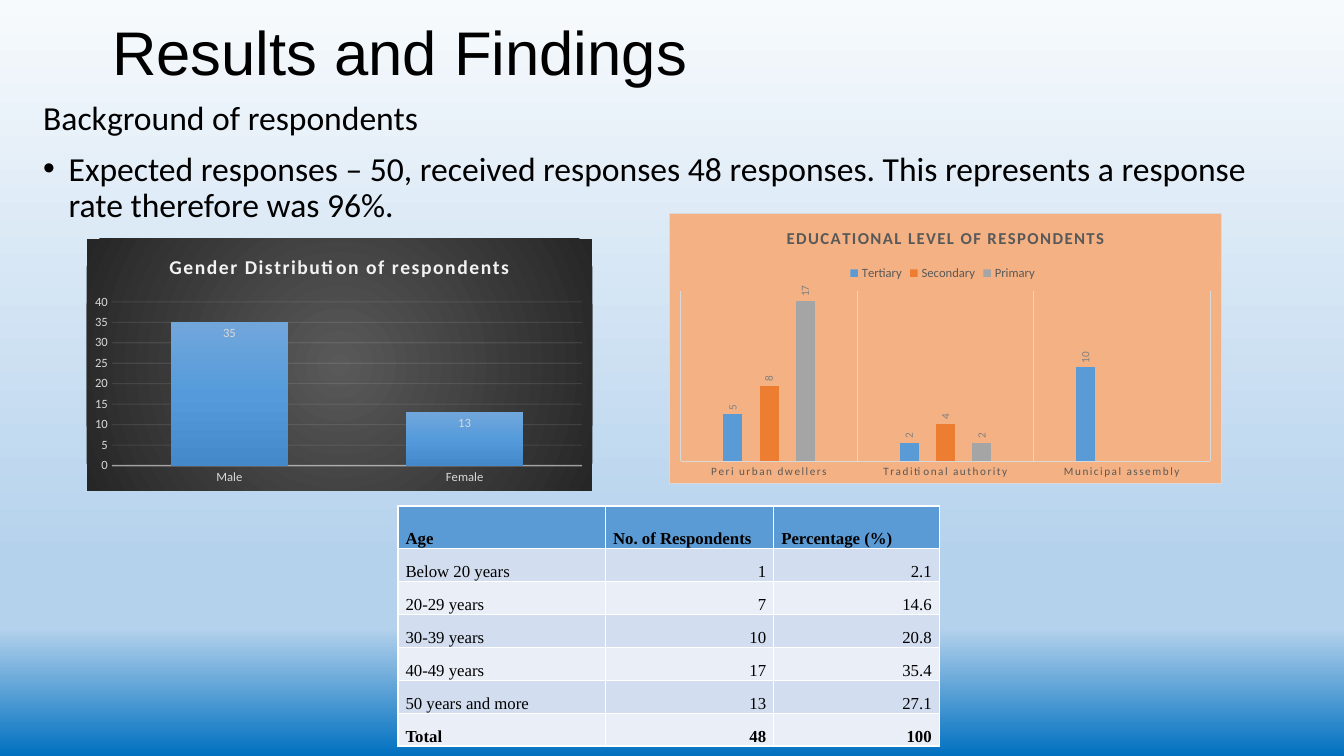
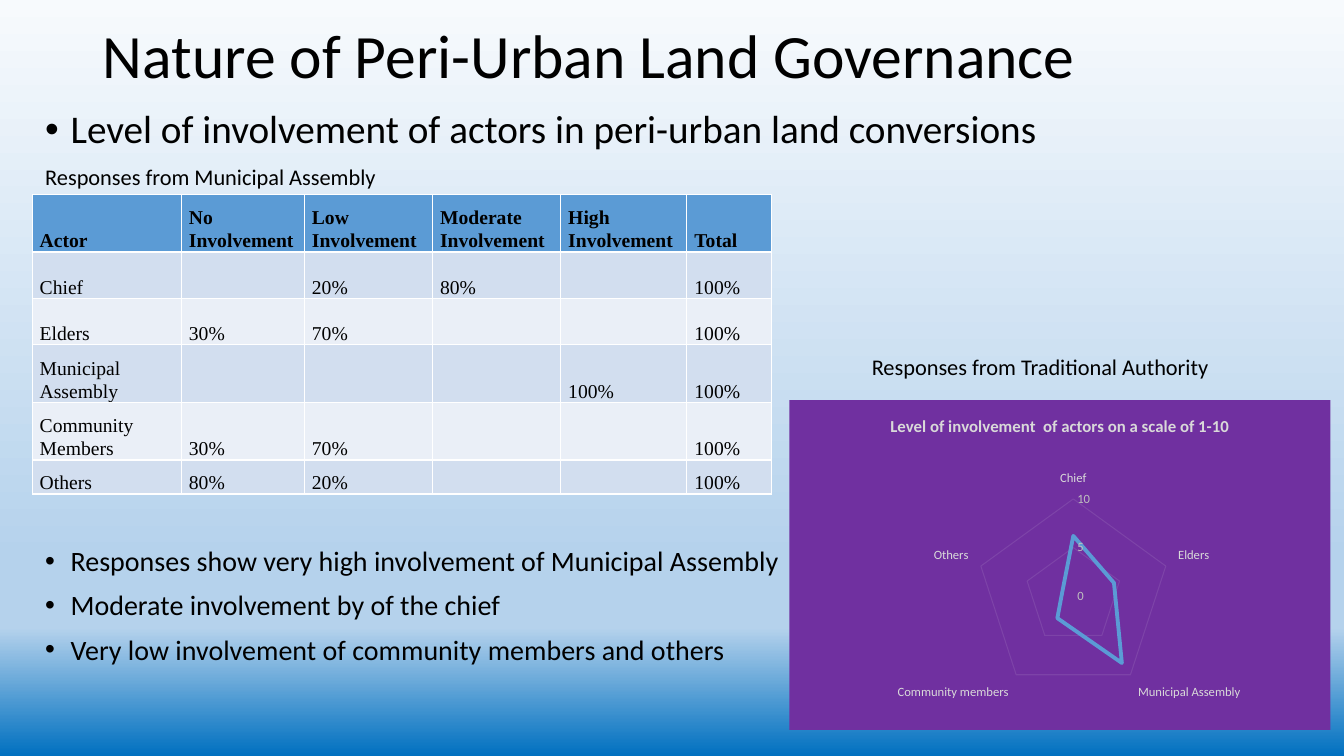
from dataclasses import dataclass

from lxml import etree
from pptx import Presentation
from pptx.chart.data import CategoryChartData
from pptx.dml.color import RGBColor
from pptx.enum.chart import XL_CHART_TYPE, XL_LABEL_POSITION, XL_LEGEND_POSITION, XL_TICK_MARK
from pptx.enum.text import MSO_ANCHOR, PP_ALIGN
from pptx.oxml import parse_xml
from pptx.oxml.ns import nsdecls, qn
from pptx.util import Cm, Pt

LEFT, RIGHT, JUSTIFY = PP_ALIGN.LEFT, PP_ALIGN.RIGHT, PP_ALIGN.JUSTIFY
COLUMNS, RADAR = XL_CHART_TYPE.COLUMN_CLUSTERED, XL_CHART_TYPE.RADAR
INSIDE_END, OUTSIDE_END = XL_LABEL_POSITION.INSIDE_END, XL_LABEL_POSITION.OUTSIDE_END
LEGEND_TOP = XL_LEGEND_POSITION.TOP
NO_TICKS = XL_TICK_MARK.NONE
MIDDLE, BOTTOM = MSO_ANCHOR.MIDDLE, MSO_ANCHOR.BOTTOM


@dataclass(frozen=True)
class Theme:
    body_font: str = "Calibri"
    table_font: str = "Times New Roman"
    ink: str = "000000"
    blue: str = "5B9BD5"
    orange: str = "ED7D31"
    grey: str = "A5A5A5"
    row_dark: str = "D2DEEF"
    row_light: str = "EAEFF7"
    charcoal: str = "262626"
    peach: str = "F4B183"
    purple: str = "7030A0"
    pale: str = "F2F2F2"
    silver: str = "D9D9D9"
    scale_grey: str = "BFBFBF"
    label_grey: str = "808080"
    dark_grey: str = "595959"
    background: tuple = ((0, "F7FAFD"), (74, "B5D2EC"), (83, "B5D2EC"), (100, "0070C0"))
    bar_shade: tuple = ((0, "71A6DB"), (50, "559BDB"), (100, "448ACA"))
    spotlight: tuple = ((0, "595959"), (100, "262626"))
    title_size: int = 44
    heading_size: int = 28
    lead_size: int = 24
    bullet_size: int = 20
    caption_size: int = 16
    chart_size: int = 10
    axis_size: int = 9
    small_size: int = 8


theme = Theme()


def write(para, text, size, name=theme.body_font, color=theme.ink, bold=False):
    para.text = text
    para.font.size, para.font.name, para.font.bold = Pt(size), name, bold
    para.font.color.rgb = RGBColor.from_string(color)


def place(element, index, **fractions):
    """Give a chart part a manual layout, in fractions of the chart area."""
    for old in element.findall(qn("c:layout")):
        element.remove(old)
    target = '<c:layoutTarget val="inner"/>' if "w" in fractions else ""
    modes = '<c:xMode val="edge"/><c:yMode val="edge"/>'
    values = "".join(f'<c:{key} val="{value}"/>' for key, value in fractions.items())
    element.insert(index, parse_xml(
        f'<c:layout {nsdecls("c")}><c:manualLayout>{target}{modes}{values}</c:manualLayout></c:layout>'))


deck = Presentation()
deck.slide_width, deck.slide_height = Cm(33.87), Cm(19.05)
master = deck.slide_master
master.background.fill.solid()

# Titles
titles = [
    ("Results and Findings", "Arial", (2.57, 0.38, 28.7, 2.06)),
    ("Nature of Peri-Urban Land Governance", theme.body_font, (2.34, 0.33, 29.21, 2.31)),
]
pages = []
for text, font_name, area in titles:
    page = deck.slides.add_slide(deck.slide_layouts[5])
    title = page.shapes.title
    title.left, title.top, title.width, title.height = map(Cm, area)
    title.text_frame.vertical_anchor = MIDDLE
    para = title.text_frame.paragraphs[0]
    write(para, text, theme.title_size, font_name)
    para.alignment, para.line_spacing = LEFT, 0.9
    pages.append(page)
results, governance = pages

# Body text: each line is text, size, bulleted
texts = [
    (results, (0.84, 2.44, 32.06, 3.2), [
        ("Background of respondents", theme.lead_size, False),
        ("Expected responses – 50, received responses 48 responses. This represents a response "
         "rate therefore was 96%.", theme.lead_size, True),
    ]),
    (governance, (0.89, 2.64, 32.08, 2.2), [
        ("Level of involvement of actors in peri-urban land conversions", theme.heading_size, True),
        ("Responses from Municipal Assembly", theme.caption_size, False),
    ]),
    (governance, (21.72, 8.86, 9.5, 1), [
        ("Responses from Traditional Authority", theme.caption_size, False),
    ]),
    (governance, (0.89, 13.67, 19.3, 3.5), [
        ("Responses show very high involvement of Municipal Assembly", theme.bullet_size, True),
        ("Moderate involvement by of the chief", theme.bullet_size, True),
        ("Very low involvement of community members and others", theme.bullet_size, True),
    ]),
]
for page, area, lines in texts:
    frame = page.shapes.add_textbox(*map(Cm, area)).text_frame
    frame.word_wrap = True
    for number, (text, size, bulleted) in enumerate(lines):
        para = frame.add_paragraph() if number else frame.paragraphs[0]
        if bulleted:
            properties = para._p.get_or_add_pPr()
            properties.set("marL", str(Cm(0.64)))
            properties.set("indent", str(-Cm(0.64)))
            etree.SubElement(properties, qn("a:buFont"), typeface="Arial")
            etree.SubElement(properties, qn("a:buChar"), char="•")
        write(para, text, size)
        para.line_spacing, para.space_before = 0.9, Pt(10)

# Charts
charts = []
for page, kind, area, categories, series, heading, title_look, fill, plot_area in [
    (results, COLUMNS, (2.18, 6.02, 12.75, 6.35), ["Male", "Female"],
     [("Series 1", [35, 13])],
     "Gender Distribution of respondents", (14, theme.pale, 100), theme.charcoal,
     (0.05, 0.25, 0.93, 0.65)),
    (results, COLUMNS, (16.87, 5.36, 13.92, 6.83),
     ["Peri urban dwellers", "Traditional authority", "Municipal assembly"],
     [("Tertiary", [5, 2, 10]), ("Secondary", [8, 4, None]), ("Primary", [17, 2, None])],
     "EDUCATIONAL LEVEL OF RESPONDENTS", (12, theme.dark_grey, 100), theme.peach,
     (0.02, 0.29, 0.96, 0.63)),
    (governance, RADAR, (19.89, 10.08, 13.64, 8.31),
     ["Chief", "Elders", "Municipal Assembly", "Community members", "Others"],
     [("Series 1", [6.2, 4.4, 8.5, 2.8, 1.2])],
     "Level of involvement  of actors on a scale of 1-10", (12, theme.silver, 0), theme.purple,
     (0.34, 0.3, 0.37, 0.59)),
]:
    data = CategoryChartData()
    data.categories = categories
    for name, values in series:
        data.add_series(name, values)
    chart = page.shapes.add_chart(kind, *map(Cm, area), data).chart
    chart.font.size, chart.font.name = Pt(theme.chart_size), theme.body_font
    chart.font.color.rgb = RGBColor.from_string(theme.ink)
    chart.has_legend = False
    chart.plots[0].vary_by_categories = False

    size, color, spacing = title_look
    write(chart.chart_title.text_frame.paragraphs[0], heading, size, color=color, bold=True)
    for properties in chart.element.xpath(".//c:title//a:defRPr"):
        properties.set("spc", str(spacing))

    chart.element.find(qn("c:txPr")).addprevious(parse_xml(
        f'<c:spPr {nsdecls("c", "a")}><a:solidFill><a:srgbClr val="{fill}"/></a:solidFill>'
        '<a:ln><a:noFill/></a:ln></c:spPr>'))
    place(chart.element.xpath(".//c:plotArea")[0], 0, **dict(zip("xywh", plot_area)))

    for axis in (chart.category_axis, chart.value_axis):
        axis.major_tick_mark = axis.minor_tick_mark = NO_TICKS
        axis.has_major_gridlines = False
        axis.tick_labels.font.size = Pt(theme.axis_size)
        axis.tick_labels.font.name = theme.body_font
        axis.tick_labels.font.color.rgb = RGBColor.from_string(theme.silver)
    charts.append(chart)
gender, education, involvement = charts

for chart, top_value in [(gender, 40), (education, 18), (involvement, 10)]:
    chart.value_axis.minimum_scale, chart.value_axis.maximum_scale = 0, top_value
    chart.value_axis.major_unit = 5

# Faint lines on the dark charts
for chart in (gender, involvement):
    chart.value_axis.format.line.fill.background()
    chart.value_axis.has_major_gridlines = True
    for line, width, part, opacity in [
        (chart.value_axis.major_gridlines.format.line, 0.75, "c:valAx/c:majorGridlines", 10),
        (chart.category_axis.format.line, 1, "c:catAx/c:spPr", 54),
    ]:
        line.width = Pt(width)
        line.color.rgb = RGBColor.from_string(theme.pale)
        for shade in chart.element.xpath(f".//{part}//a:srgbClr"):
            etree.SubElement(shade, qn("a:alpha"), val=str(opacity * 1000))

# Columns and their labels
for chart, gap, overlap, position, size, color, bar_colors in [
    (gender, 100, -24, INSIDE_END, theme.axis_size, theme.silver, [theme.blue]),
    (education, 444, -90, OUTSIDE_END, theme.small_size, theme.label_grey,
     [theme.blue, theme.orange, theme.grey]),
]:
    plot = chart.plots[0]
    plot.gap_width, plot.overlap = gap, overlap
    plot.has_data_labels = True
    labels = plot.data_labels
    labels.show_value, labels.position = True, position
    labels.font.size, labels.font.name = Pt(size), theme.body_font
    labels.font.color.rgb = RGBColor.from_string(color)
    for bars, bar_color in zip(plot.series, bar_colors):
        bars.format.fill.solid()
        bars.format.fill.fore_color.rgb = RGBColor.from_string(bar_color)

education.value_axis.visible = False
education.category_axis.has_major_gridlines = True
education.category_axis.tick_labels.font.size = Pt(theme.small_size)
education.category_axis.tick_labels.font.color.rgb = RGBColor.from_string(theme.dark_grey)
for line in (education.category_axis.format.line,
             education.category_axis.major_gridlines.format.line):
    line.width = Pt(0.75)
    line.color.rgb = RGBColor.from_string(theme.silver)
for properties in education.element.xpath(".//c:catAx/c:txPr//a:defRPr"):
    properties.set("spc", "100")
for body in education.element.xpath(".//c:dLbls//a:bodyPr"):
    body.set("rot", "-5400000")
    body.set("vert", "horz")
border = education.element.xpath("./c:spPr/a:ln")[0]
border.set("w", str(Pt(0.75)))
border.replace(border[0], parse_xml(
    f'<a:solidFill {nsdecls("a")}><a:srgbClr val="{theme.silver}"/></a:solidFill>'))

education.has_legend = True
legend = education.legend
legend.position, legend.include_in_layout = LEGEND_TOP, False
legend.font.size, legend.font.name = Pt(theme.axis_size), theme.body_font
legend.font.color.rgb = RGBColor.from_string(theme.dark_grey)
place(education.element.xpath(".//c:legend")[0], 1, x=0.32, y=0.18)

involvement.value_axis.tick_labels.font.color.rgb = RGBColor.from_string(theme.scale_grey)
outline = involvement.plots[0].series[0].format.line
outline.width = Pt(2.75)
outline.color.rgb = RGBColor.from_string(theme.blue)

# Gradients take the place of plain fills
down = '<a:lin ang="5400000" scaled="0"/>'
outward = '<a:path path="circle"><a:fillToRect l="50000" t="50000" r="50000" b="50000"/></a:path>'
for root, place_of_fill, stops, direction in [
    (master.element, ".//p:bgPr/a:solidFill", theme.background, down),
    (gender.element, "./c:spPr/a:solidFill", theme.spotlight, outward),
    (gender.element, ".//c:ser/c:spPr/a:solidFill", theme.bar_shade, down),
]:
    plain = root.xpath(place_of_fill)[0]
    stop_list = "".join(f'<a:gs pos="{percent * 1000}"><a:srgbClr val="{color}"/></a:gs>'
                        for percent, color in stops)
    plain.getparent().replace(plain, parse_xml(
        f'<a:gradFill {nsdecls("a")} rotWithShape="1"><a:gsLst>{stop_list}</a:gsLst>'
        f'{direction}</a:gradFill>'))

# Tables
ages = [
    ("Age", "No. of Respondents", "Percentage (%)"),
    ("Below 20 years", "1", "2.1"),
    ("20-29 years", "7", "14.6"),
    ("30-39 years", "10", "20.8"),
    ("40-49 years", "17", "35.4"),
    ("50 years and more", "13", "27.1"),
    ("Total", "48", "100"),
]
actors = [
    ("Actor", "No Involvement", "Low Involvement", "Moderate Involvement", "High Involvement", "Total"),
    ("Chief", "", "20%", "80%", "", "100%"),
    ("Elders", "30%", "70%", "", "", "100%"),
    ("Municipal Assembly", "", "", "", "100%", "100%"),
    ("Community Members", "30%", "70%", "", "", "100%"),
    ("Others", "80%", "20%", "", "", "100%"),
]
for page, rows, left, top, widths, heights, size, head_align, text_align, number_align, bold_rows in [
    (results, ages, 10.03, 12.75, [5.23, 4.24, 4.17], [1.07] + [0.83] * 6,
     12, LEFT, LEFT, RIGHT, (0, 6)),
    (governance, actors, 0.81, 4.9, [3.76, 3.1, 3.23, 3.23, 3.18, 2.13],
     [1.45, 1.17, 1.17, 1.45, 1.45, 0.86], 14, JUSTIFY, JUSTIFY, JUSTIFY, (0,)),
]:
    table = page.shapes.add_table(len(rows), len(widths), Cm(left), Cm(top),
                                  Cm(sum(widths)), Cm(sum(heights))).table
    for column, width in zip(table.columns, widths):
        column.width = Cm(width)
    for r, (texts_in_row, height) in enumerate(zip(rows, heights)):
        table.rows[r].height = Cm(height)
        row_fill = theme.blue if r == 0 else theme.row_dark if r % 2 else theme.row_light
        for c, text in enumerate(texts_in_row):
            cell = table.cell(r, c)
            cell.fill.solid()
            cell.fill.fore_color.rgb = RGBColor.from_string(row_fill)
            cell.margin_left = cell.margin_right = Cm(0.19)
            cell.margin_top = cell.margin_bottom = 0
            cell.vertical_anchor = BOTTOM
            para = cell.text_frame.paragraphs[0]
            write(para, text, size, theme.table_font, bold=r in bold_rows)
            para.alignment = head_align if r == 0 else number_align if c else text_align
            para.line_spacing = 1.07

deck.save("out.pptx")
